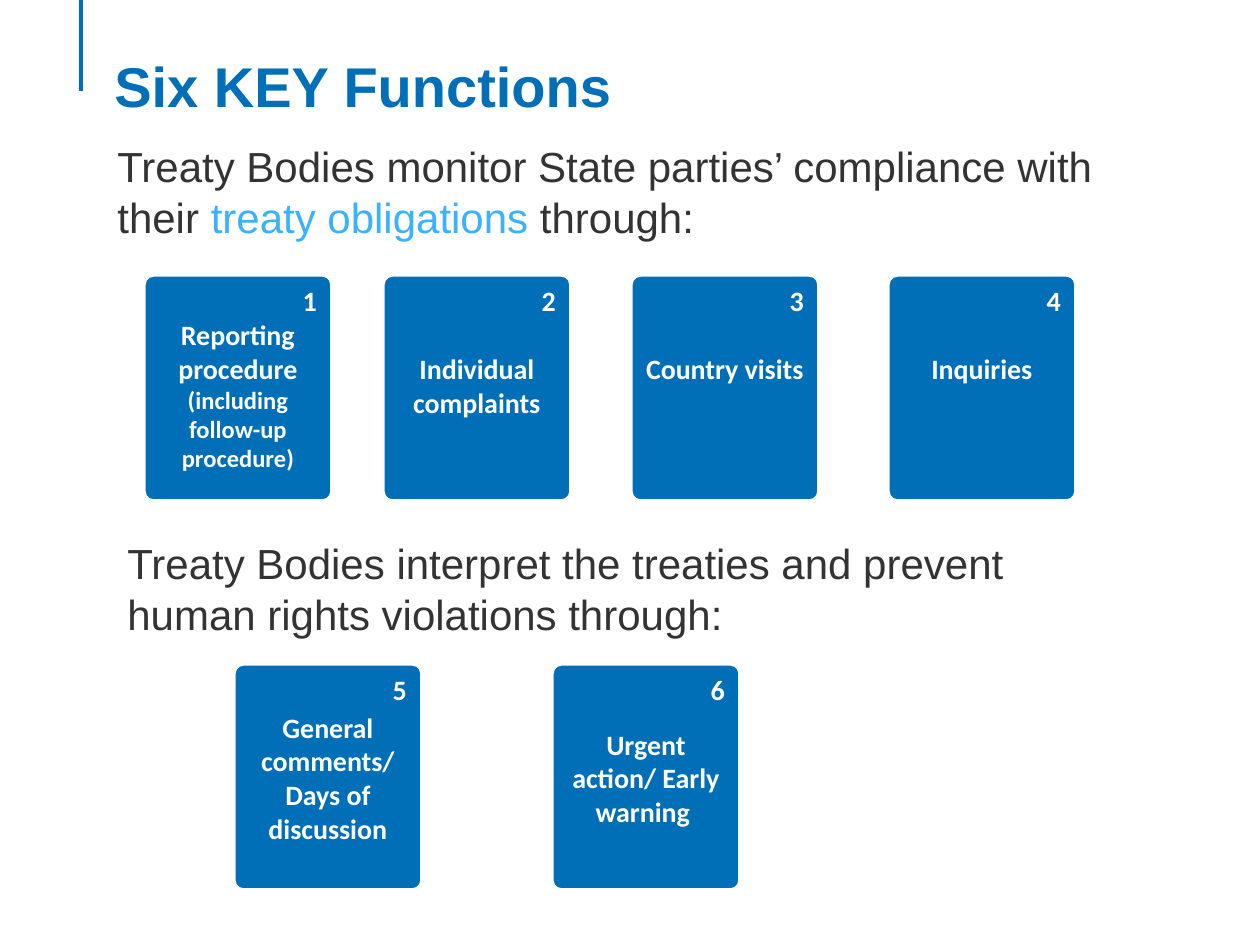
from dataclasses import dataclass

from lxml.etree import SubElement
from pptx import Presentation
from pptx.dml.color import RGBColor
from pptx.enum.shapes import MSO_CONNECTOR, MSO_SHAPE
from pptx.enum.text import MSO_ANCHOR, PP_ALIGN
from pptx.oxml.ns import qn
from pptx.util import Emu, Pt


@dataclass(frozen=True)
class Theme:
    blue: RGBColor = RGBColor(0x00, 0x6F, 0xB7)
    light_blue: RGBColor = RGBColor(0x3B, 0xB2, 0xFF)
    grey: RGBColor = RGBColor(0x33, 0x33, 0x33)
    white: RGBColor = RGBColor(0xFF, 0xFF, 0xFF)
    text_font: str = "Arial"
    card_font: str = "Calibri"
    title_size: int = 32
    body_size: int = 24
    card_size: int = 16
    note_size: int = 14
    line_width: int = 2


THEME = Theme()
PX_PER_INCH = 126
CARD_WIDTH, CARD_HEIGHT = 188, 226


def px(length):
    return Emu(round(length * 914400 / PX_PER_INCH))


def add_run(paragraph, text, *, size, color, font=THEME.text_font, bold=False):
    run = paragraph.add_run()
    run.text = text
    run.font.name = font
    run.font.size = Pt(size)
    run.font.bold = bold
    run.font.color.rgb = color


def add_text(slide, box, runs, *, size, bold=False, top_inset=6):
    """Place one paragraph made of (text, colour) runs."""
    shape = slide.shapes.add_textbox(*map(px, box))
    frame = shape.text_frame
    frame.word_wrap = True
    frame.margin_top = px(top_inset)
    for text, color in runs:
        add_run(frame.paragraphs[0], text, size=size, color=color, bold=bold)


def add_accent_line(slide, left, top, height):
    line = slide.shapes.add_connector(
        MSO_CONNECTOR.STRAIGHT, px(left), px(top), px(left), px(top + height))
    line.line.color.rgb = THEME.blue
    line.line.width = Pt(THEME.line_width)
    SubElement(line._element.spPr, qn("a:effectLst"))


def add_card(slide, left, top, number, gap, lines, note=""):
    """Draw a numbered card; gap is the space between number and label."""
    card = slide.shapes.add_shape(
        MSO_SHAPE.ROUNDED_RECTANGLE,
        *map(px, (left, top, CARD_WIDTH, CARD_HEIGHT)))
    card.adjustments[0] = 0.05
    card.shadow.inherit = False
    card.fill.solid()
    card.fill.fore_color.rgb = THEME.blue
    card.line.color.rgb = THEME.white
    card.line.width = Pt(THEME.line_width)

    frame = card.text_frame
    frame.word_wrap = True
    frame.vertical_anchor = MSO_ANCHOR.TOP
    style = dict(color=THEME.white, font=THEME.card_font, bold=True)
    paragraph = frame.paragraphs[0]
    paragraph.alignment = PP_ALIGN.RIGHT
    add_run(paragraph, str(number), size=THEME.card_size, **style)
    for index, text in enumerate(lines):
        paragraph = frame.add_paragraph()
        paragraph.alignment = PP_ALIGN.CENTER
        paragraph.space_before = px(gap if index == 0 else 0)
        add_run(paragraph, text, size=THEME.card_size, **style)
    if note:
        add_run(paragraph, note, size=THEME.note_size, **style)


def add_header(slide, left, top):
    add_accent_line(slide, left, top, 91)
    add_text(slide, (left + 21, top + 38, 1042, 97),
             [("Six KEY Functions", THEME.blue)],
             size=THEME.title_size, bold=True, top_inset=13)


def add_section(slide, box, runs, cards, cards_top):
    """Place an introduction and its cards, offset from the box corner."""
    left, top, _, _ = box
    add_text(slide, box, runs, size=THEME.body_size)
    for offset, *content in cards:
        add_card(slide, left + offset, top + cards_top, *content)


def main():
    presentation = Presentation()
    presentation.slide_width = px(1260)
    presentation.slide_height = px(945)
    slide = presentation.slides.add_slide(presentation.slide_layouts[6])

    add_header(slide, 81, 0)

    # Monitoring functions: left offset, number, gap, label, note
    add_section(
        slide, (105, 135, 1012, 115),
        [("Treaty Bodies monitor State parties’ compliance with their ", THEME.grey),
         ("treaty obligations ", THEME.light_blue),
         ("through:", THEME.grey)],
        [(39, 1, 0, ["Reporting procedure "], "(including follow-up procedure)"),
         (278, 2, 34, ["Individual complaints"]),
         (526, 3, 34, ["Country visits"]),
         (783, 4, 34, ["Inquiries"])],
        cards_top=140)

    # Interpretation and prevention functions
    add_section(
        slide, (115, 532, 1002, 115),
        [("Treaty Bodies interpret the treaties and prevent "
          "human rights violations through:", THEME.grey)],
        [(119, 5, 4, ["General comments/", "Days of discussion"]),
         (437, 6, 21, ["Urgent action/ Early warning "])],
        cards_top=132)

    presentation.save("out.pptx")


if __name__ == "__main__":
    main()
